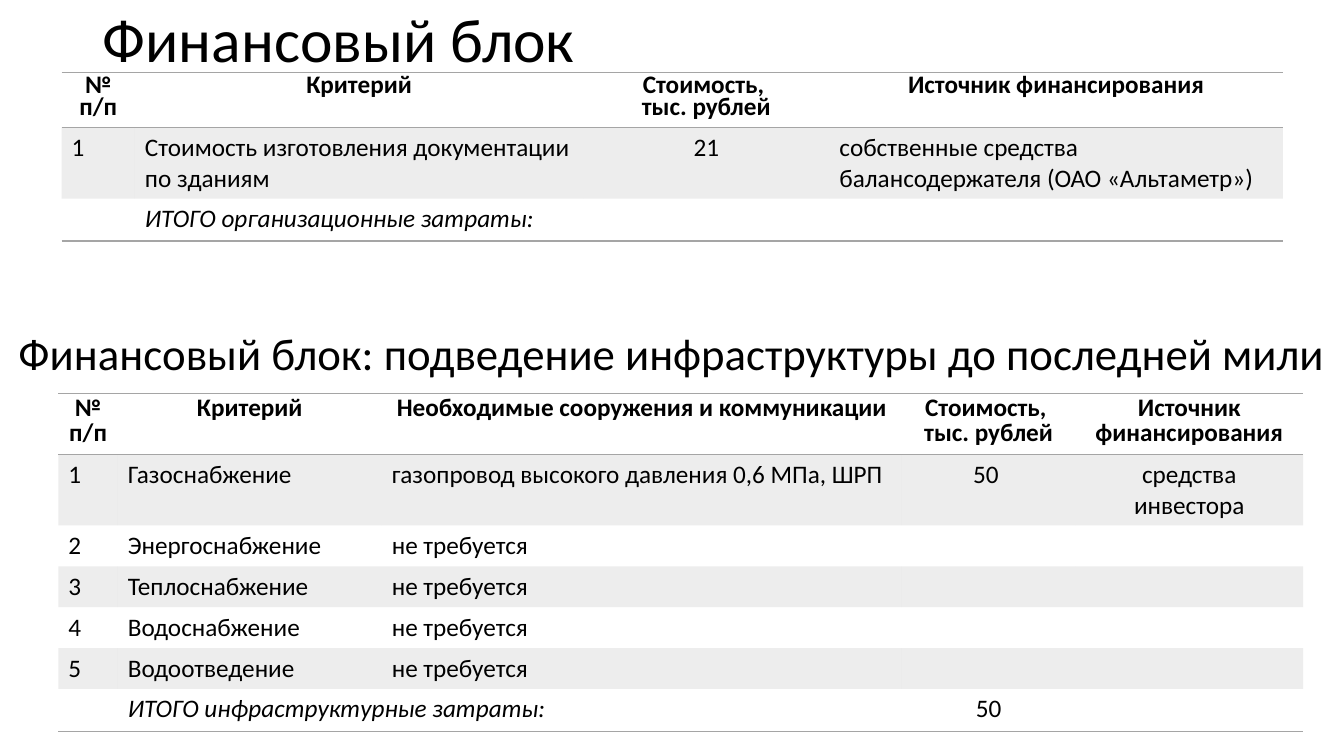
from lxml.etree import SubElement as Sub
from pptx import Presentation
from pptx.dml.color import RGBColor as Rgb
from pptx.enum.text import MSO_ANCHOR as Anchor, PP_ALIGN as Align
from pptx.oxml.ns import qn
from pptx.util import Cm, Pt

COLORS = {"text": "000000", "gray": "A5A5A5"}
FONT = "Calibri"
PLAIN = "{2D5ABB26-0587-4C30-8999-92F81FD0307C}"  # no style, no grid

# text, box in cm (left, top, width, height), size, alignment
TITLES = [
    ("Финансовый блок", (2.34, 0, 29.21, 2.13), 44, Align.LEFT),
    ("Финансовый блок: подведение инфраструктуры до последней мили",
     (0, 8.15, 33.87, 1.65), 32, Align.CENTER),
]

# Lengths in cm; "mid" holds the centred body columns, "lead" the header line pitch
COSTS = {
    "at": (1.55, 1.83), "lead": 16, "mid": {2}, "join": False,
    "cols": [1.85, 11.3, 6.2, 11.43],
    "rows": [1.37, 1.79, 1.07],
    "cells": [
        ["№ п/п", "Критерий", "Стоимость, \nтыс. рублей", "Источник финансирования"],
        ["1", "Стоимость изготовления документации по зданиям", "21",
         "собственные средства балансодержателя (ОАО «Альтаметр»)"],
        ["", "ИТОГО организационные затраты:", "", ""],
    ],
}
NEEDS = {
    "at": (1.47, 9.91), "lead": 18, "mid": {3, 4}, "join": True,
    "cols": [1.5, 6.65, 13.11, 4.37, 5.74],
    "rows": [1.54, 1.79, 1.03, 1.03, 1.03, 1.03, 1.07],
    "cells": [
        ["№ п/п", "Критерий", "Необходимые сооружения и коммуникации",
         "Стоимость, \vтыс. рублей", "Источник финансирования"],
        ["1", "Газоснабжение", "газопровод высокого давления 0,6 МПа, ШРП",
         "50 ", "средства инвестора"],
        ["2", "Энергоснабжение", "не требуется", "", ""],
        ["3", "Теплоснабжение", "не требуется", "", ""],
        ["4", "Водоснабжение", "не требуется", "", ""],
        ["5", "Водоотведение", "не требуется", "", ""],
        ["", "ИТОГО инфраструктурные затраты:", "", "50", ""],
    ],
}


def style(frame, size, align, pitch=None, bold=False, italic=False):
    for para in frame.paragraphs:
        para.alignment = align
        if pitch:
            para.line_spacing = pitch
        for run in para.runs:
            font = run.font
            font.name, font.size = FONT, Pt(size)
            font.bold, font.italic = bold, italic
            font.color.rgb = Rgb.from_string(COLORS["text"])


def add_title(slide, text, box, size, align):
    frame = slide.shapes.add_textbox(*map(Cm, box)).text_frame
    frame.word_wrap = True
    frame.vertical_anchor = Anchor.MIDDLE
    frame.text = text
    style(frame, size, align, 0.9)


def add_edge(cell, side):
    """Draw a gray rule on one side of the cell: T or B."""
    line = Sub(cell._tc.get_or_add_tcPr(), qn("a:ln" + side), w=str(Pt(1)))
    fill = Sub(line, qn("a:solidFill"))
    Sub(fill, qn("a:srgbClr"), val=COLORS["gray"])


def tint(cell):
    """Fill the cell with gray at 20 percent opacity."""
    cell.fill.solid()
    cell.fill.fore_color.rgb = Rgb.from_string(COLORS["gray"])
    color = cell._tc.tcPr.find(".//" + qn("a:srgbClr"))
    Sub(color, qn("a:alpha"), val="20000")


def add_grid(slide, data):
    cols, rows = data["cols"], data["rows"]
    box = (*data["at"], sum(cols), sum(rows))
    table = slide.shapes.add_table(len(rows), len(cols), *map(Cm, box)).table
    table._tbl.tblPr.find(qn("a:tableStyleId")).text = PLAIN
    table.first_row = table.horz_banding = False
    for col, width in zip(table.columns, cols):
        col.width = Cm(width)
    for row, height in zip(table.rows, rows):
        row.height = Cm(height)
    last = len(rows) - 1
    if data["join"]:
        table.cell(last, 1).merge(table.cell(last, 2))
    for r, line in enumerate(data["cells"]):
        head = r == 0
        for c, text in enumerate(line):
            cell = table.cell(r, c)
            cell.text_frame.text = text
            mid = head or c in data["mid"]
            style(cell.text_frame, 18, Align.CENTER if mid else Align.LEFT,
                  Pt(data["lead"]) if head else None,
                  bold=head, italic=r == last and c == 1)
            if head:
                add_edge(cell, "T")
            if r in (0, last):
                add_edge(cell, "B")
            if r % 2:
                tint(cell)
            else:
                cell.fill.background()


def main():
    deck = Presentation()
    deck.slide_width, deck.slide_height = Cm(33.87), Cm(19.05)
    slide = deck.slides.add_slide(deck.slide_layouts[6])
    for title in TITLES:
        add_title(slide, *title)
    for data in (COSTS, NEEDS):
        add_grid(slide, data)
    deck.save("out.pptx")


if __name__ == "__main__":
    main()
